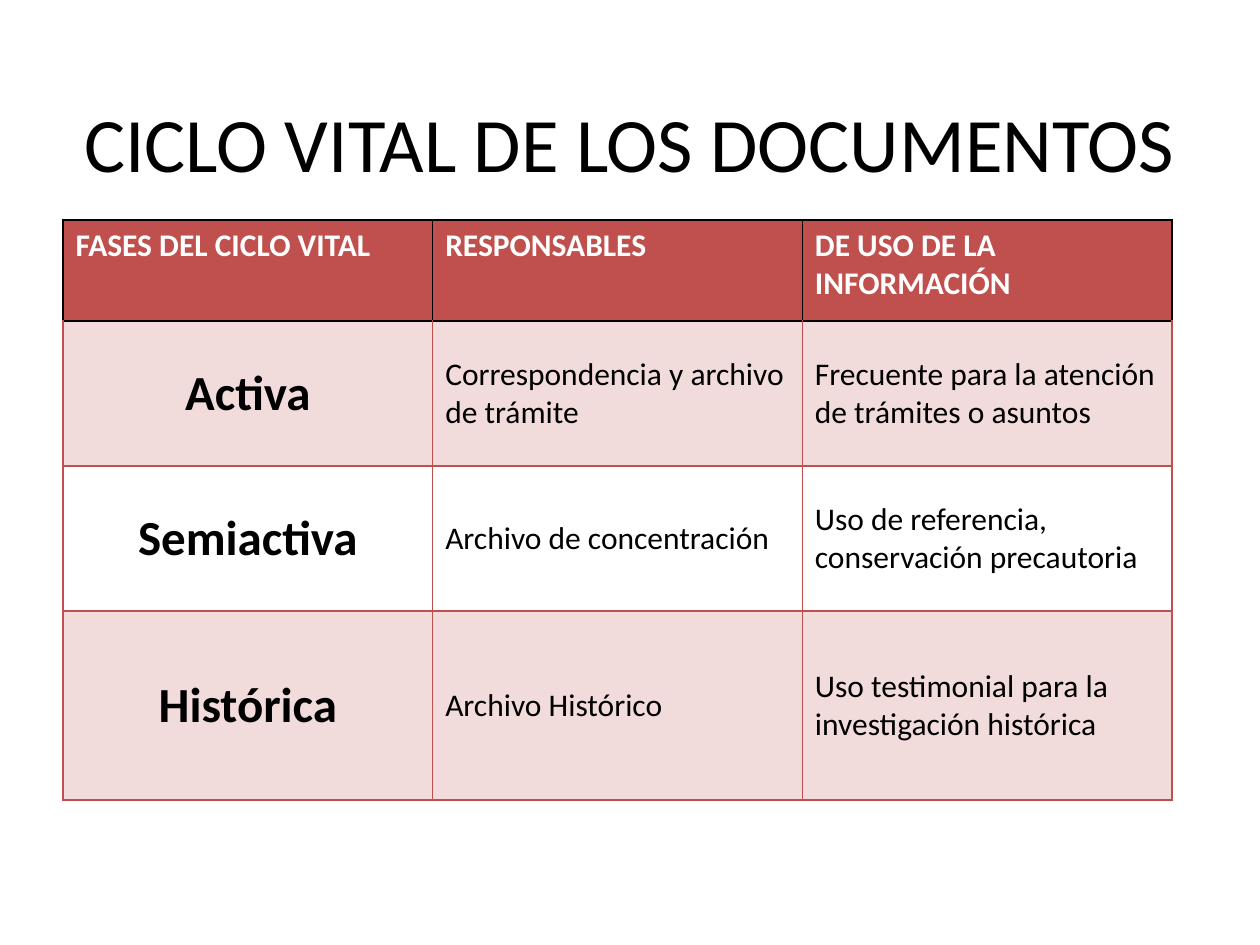
"""Build a slide with a table of the life cycle of documents."""
from lxml.etree import SubElement as Sub
from pptx import Presentation
from pptx.dml.color import RGBColor
from pptx.enum.text import MSO_ANCHOR as Anchor, PP_ALIGN as Align
from pptx.oxml import parse_xml
from pptx.oxml.ns import nsdecls, qn
from pptx.util import Pt

PX = 914400 / 126
BLACK = RGBColor(0x00, 0x00, 0x00)
WHITE = RGBColor(0xFF, 0xFF, 0xFF)
RED = RGBColor(0xC0, 0x50, 0x4D)
TITLE = "CICLO VITAL DE LOS DOCUMENTOS"
ROWS = [
    (101, ["FASES DEL CICLO VITAL", "RESPONSABLES", "DE USO DE LA INFORMACIÓN"]),
    (145, ["Activa", "Correspondencia y archivo de trámite",
           "Frecuente para la atención de trámites o asuntos"]),
    (145, ["Semiactiva", "Archivo de concentración",
           "Uso de referencia, conservación precautoria"]),
    (189, ["Histórica", "Archivo Histórico",
           "Uso testimonial para la investigación histórica"]),
]


def box(*sizes):
    return [round(size * PX) for size in sizes]


def write(frame, text, size, color, bold=False, align=Align.LEFT):
    para = frame.paragraphs[0]
    para.alignment = align
    run = para.add_run()
    run.text = text
    run.font.name = "Calibri"
    run.font.size = Pt(size)
    run.font.bold = bold
    run.font.color.rgb = color


prs = Presentation()
prs.slide_width, prs.slide_height = box(1260, 945)
slide = prs.slides.add_slide(prs.slide_layouts[6])

title = slide.shapes.add_textbox(*box(63, 63, 1134, 158)).text_frame
title.word_wrap = True
title.vertical_anchor = Anchor.MIDDLE
write(title, TITLE, 44, BLACK, align=Align.CENTER)

high = sum(height for height, texts in ROWS)
table = slide.shapes.add_table(4, 3, *box(63, 220, 1109, high)).table
table.horz_banding = False
for col in table.columns:
    col.width = round(1109 * PX / 3)

for r, (height, texts) in enumerate(ROWS):
    table.rows[r].height = round(height * PX)
    for c, text in enumerate(texts):
        cell = table.cell(r, c)
        head, first = r == 0, c == 0
        cell.vertical_anchor = Anchor.TOP if head else Anchor.MIDDLE
        write(cell.text_frame, text, 28 if first and not head else 18,
              WHITE if head else BLACK, head or first,
              Align.CENTER if first and not head else Align.LEFT)
        if r == 2:
            cell.fill.background()
        else:
            cell.fill.solid()
            cell.fill.fore_color.rgb = RED
        props = cell._tc.get_or_add_tcPr()
        if r in (1, 3):
            tint = props.find(".//" + qn("a:srgbClr"))
            Sub(tint, qn("a:alpha"), val="20000")
        for i, side in enumerate("LRTB"):
            ink = BLACK if head or (r == 1 and side == "T") else RED
            props.insert(i, parse_xml(
                f'<a:ln{side} {nsdecls("a")} w="12700"><a:solidFill>'
                f'<a:srgbClr val="{ink}"/></a:solidFill></a:ln{side}>'))

prs.save("out.pptx")
